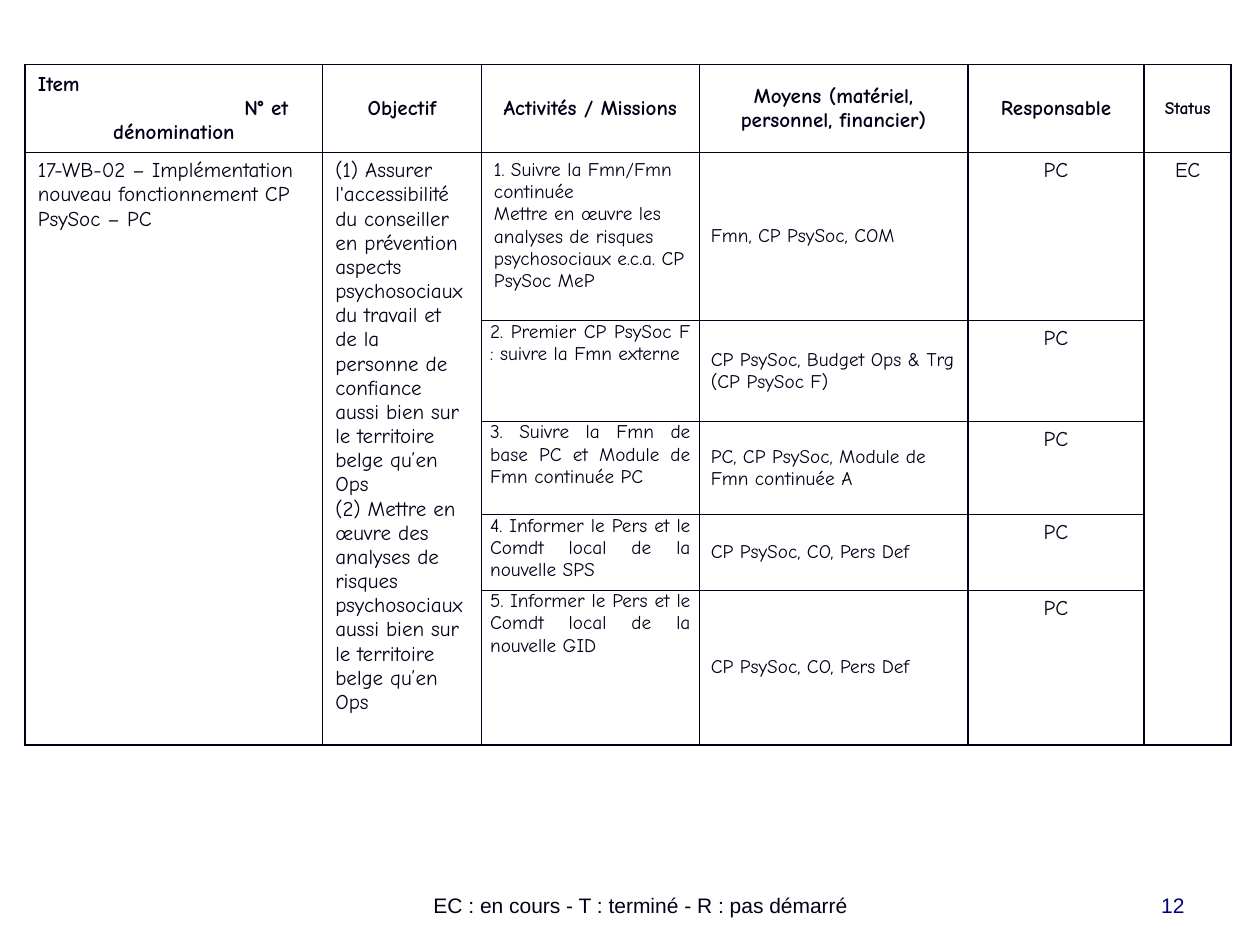
from dataclasses import dataclass

from lxml.etree import SubElement
from pptx import Presentation
from pptx.dml.color import RGBColor
from pptx.enum.text import MSO_ANCHOR as Anchor, PP_ALIGN as Align
from pptx.oxml.ns import qn
from pptx.util import Pt


@dataclass(frozen=True)
class Theme:
    ink: str = "000018"
    number: str = "000080"
    table_font: str = "Comic Neue"
    footer_font: str = "Arial"
    body: int = 12
    detail: int = 11
    small: int = 10
    border: int = 1


THEME = Theme()

# Content
HEADERS = ["Objectif", "Activités / Missions",
           "Moyens (matériel, personnel, financier)", "Responsable", "Status"]
ITEM_HEADER = [("Item", Align.LEFT, 0), ("N° et", Align.LEFT, 118),
               ("dénomination", Align.CENTER, 0)]
ITEM = ["17-WB-02 – Implémentation nouveau fonctionnement CP PsySoc – PC"]
OBJECTIVES = [
    "(1) Assurer l'accessibilité du conseiller en prévention aspects "
    "psychosociaux du travail et",
    "de la personne de confiance aussi bien sur le territoire belge qu’en Ops",
    "(2) Mettre en œuvre des analyses de risques psychosociaux aussi bien "
    "sur le territoire",
    "belge qu’en Ops",
]
STATUS = ["EC"]
ACTIVITIES = [
    (["1. Suivre la Fmn/Fmn continuée",
      "Mettre en œuvre les analyses de risques psychosociaux e.c.a. CP PsySoc MeP"],
     "Fmn, CP PsySoc, COM", "PC"),
    (["2. Premier CP PsySoc F : suivre la Fmn externe"],
     "CP PsySoc, Budget Ops & Trg (CP PsySoc F)", "PC"),
    (["3. Suivre la Fmn de base PC et Module de Fmn continuée PC"],
     "PC, CP PsySoc, Module de Fmn continuée A", "PC"),
    (["4. Informer le Pers et le Comdt local de la nouvelle SPS"],
     "CP PsySoc, CO, Pers Def", "PC"),
    (["5. Informer le Pers et le Comdt local de la nouvelle GID"],
     "CP PsySoc, CO, Pers Def", "PC"),
]
LEGEND = "EC : en cours - T : terminé - R : pas démarré"
PAGE_NUMBER = "12"

# Layout
COLUMNS = [170, 90.7, 124.6, 153.4, 100.8, 49.7]
ROWS = [48.6, 96, 57.6, 53.3, 43.2, 74.9]
TABLE_LEFT, TABLE_TOP = 14.4, 36.8
WIDE, TIGHT = (7.2, 3.6), (5, 0)  # side and top/bottom cell margins


def write(frame, lines, align=Align.LEFT, size=THEME.body, bold=False,
          font=THEME.table_font, color=THEME.ink, after=0):
    for index, line in enumerate(lines):
        paragraph = frame.paragraphs[0] if index == 0 else frame.add_paragraph()
        paragraph.alignment = align
        paragraph.space_after = Pt(after)
        run = paragraph.add_run()
        run.text = line
        run.font.name, run.font.size, run.font.bold = font, Pt(size), bold
        run.font.color.rgb = RGBColor.from_string(color)


def fill_cell(cell, lines, anchor=Anchor.TOP, margins=WIDE, **style):
    side, edge = margins
    cell.margin_left = cell.margin_right = Pt(side)
    cell.margin_top = cell.margin_bottom = Pt(edge)
    cell.vertical_anchor = anchor
    write(cell.text_frame, lines, **style)


def draw_borders(cell):
    properties = cell._tc.get_or_add_tcPr()
    for edge in ("lnL", "lnR", "lnT", "lnB"):
        line = SubElement(properties, qn(f"a:{edge}"), w=str(Pt(THEME.border)))
        solid = SubElement(line, qn("a:solidFill"))
        SubElement(solid, qn("a:srgbClr"), val=THEME.ink)
    cell.fill.background()


def add_footer(slide, left, width, text, **style):
    box = slide.shapes.add_textbox(Pt(left), Pt(492), Pt(width), Pt(36))
    box.text_frame.word_wrap = True
    box.text_frame.vertical_anchor = Anchor.BOTTOM
    write(box.text_frame, [text], font=THEME.footer_font, **style)


def add_plan_table(slide):
    frame = slide.shapes.add_table(
        len(ROWS), len(COLUMNS), Pt(TABLE_LEFT), Pt(TABLE_TOP),
        Pt(sum(COLUMNS)), Pt(sum(ROWS)))
    table = frame.table
    table.first_row = table.horz_banding = False
    for column, width in zip(table.columns, COLUMNS):
        column.width = Pt(width)
    for row, height in zip(table.rows, ROWS):
        row.height = Pt(height)
    for cell in table.iter_cells():
        draw_borders(cell)

    # Header row
    item = table.cell(0, 0)
    fill_cell(item, [text for text, _, _ in ITEM_HEADER], Anchor.MIDDLE, bold=True)
    for paragraph, (_, align, indent) in zip(item.text_frame.paragraphs, ITEM_HEADER):
        paragraph.alignment = align
        paragraph._p.get_or_add_pPr().set("marL", str(Pt(indent)))
    for column, header in enumerate(HEADERS, start=1):
        size = THEME.small if header == "Status" else THEME.body
        fill_cell(table.cell(0, column), [header], Anchor.MIDDLE,
                  align=Align.CENTER, size=size, bold=True)

    # Cells that span every activity
    last_row = len(ROWS) - 1
    for column, lines, align in [(0, ITEM, Align.LEFT), (1, OBJECTIVES, Align.LEFT),
                                 (5, STATUS, Align.CENTER)]:
        cell = table.cell(1, column)
        cell.merge(table.cell(last_row, column))
        fill_cell(cell, lines, align=align)

    # One row per activity
    for row, (activity, means, owner) in enumerate(ACTIVITIES, start=1):
        if row == 1:
            fill_cell(table.cell(row, 2), activity, size=THEME.detail)
        else:
            fill_cell(table.cell(row, 2), activity, margins=TIGHT,
                      align=Align.JUSTIFY, size=THEME.detail, after=3)
        means_cell = table.cell(row, 3)
        fill_cell(means_cell, [means], Anchor.MIDDLE, TIGHT, size=THEME.detail, after=3)
        means_cell.margin_left = Pt(6.5)
        fill_cell(table.cell(row, 4), [owner], align=Align.CENTER)


def main():
    presentation = Presentation()
    presentation.slide_width, presentation.slide_height = Pt(720), Pt(540)
    slide = presentation.slides.add_slide(presentation.slide_layouts[6])
    add_footer(slide, 167.8, 396.7, LEGEND, align=Align.CENTER)
    add_plan_table(slide)
    add_footer(slide, 516.2, 167.8, PAGE_NUMBER, align=Align.RIGHT, color=THEME.number)
    presentation.save("out.pptx")


if __name__ == "__main__":
    main()
